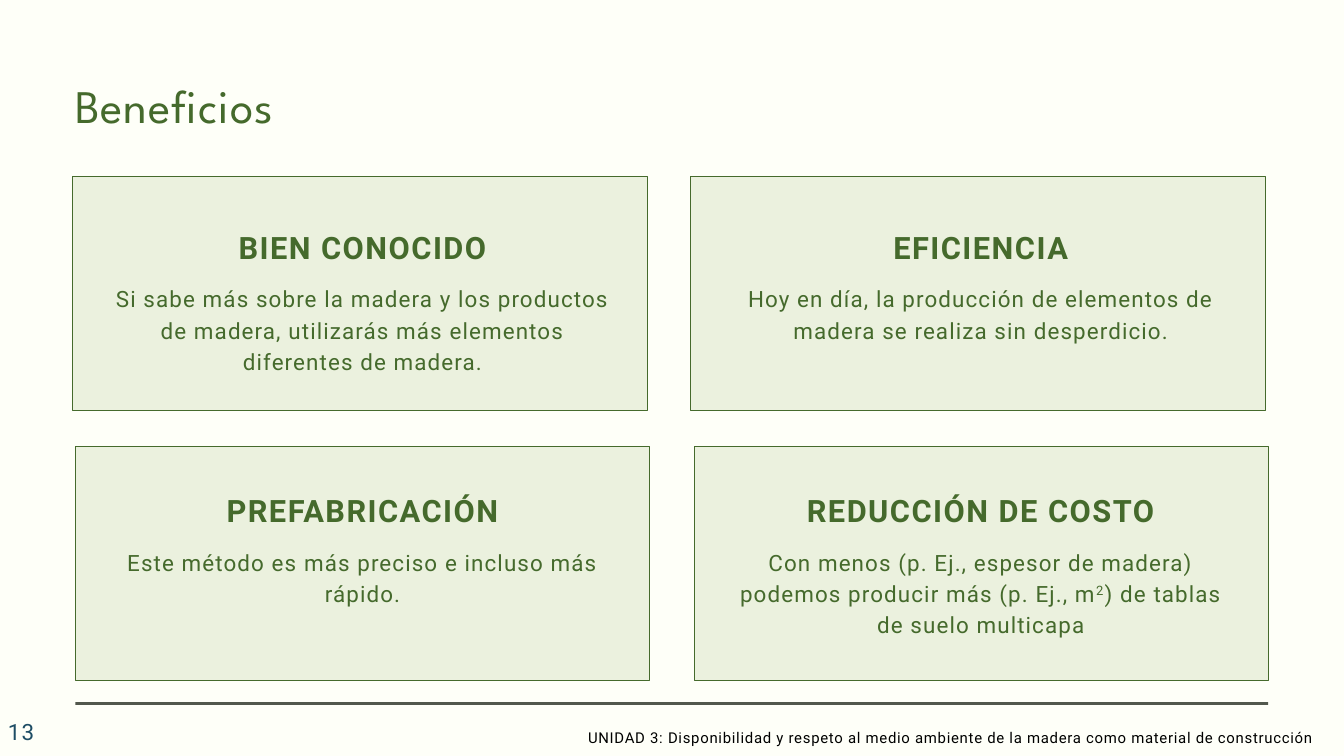
from pptx import Presentation
from pptx.dml.color import RGBColor
from pptx.enum.shapes import MSO_SHAPE
from pptx.enum.text import MSO_ANCHOR, MSO_AUTO_SIZE, PP_ALIGN
from pptx.util import Pt

PX = 9144  # 100 px to the inch
COLORS = {
    "paper": "FEFFF8",
    "green": "456A2C",
    "card": "EBF1DE",
    "rule": "52584D",
    "page": "1E4D65",
    "black": "000000",
}


def color(name):
    return RGBColor.from_string(COLORS[name])


def write(box, text, size, gap, ink="green", font="Roboto", bold=False,
          align=PP_ALIGN.LEFT, line=None):
    """Fill a text shape; gap is the letter spacing in points."""
    frame = box.text_frame
    frame.text = text
    frame.word_wrap = True
    frame.auto_size = MSO_AUTO_SIZE.NONE
    frame.vertical_anchor = MSO_ANCHOR.TOP
    frame.margin_left = frame.margin_right = 0
    frame.margin_top = frame.margin_bottom = 0
    par = frame.paragraphs[0]
    par.alignment = align
    if line:
        par.line_spacing = Pt(line)
    # A squared unit gets its exponent as a raised run
    head, mark, tail = text.partition("m²")
    if mark:
        par.runs[0].text = head + "m"
        power = par.add_run()
        power.text = "2"
        power.font._element.set("baseline", "30000")
        par.add_run().text = tail
    for run in par.runs:
        run.font.name = font
        run.font.size = Pt(size)
        run.font.bold = bold
        run.font.color.rgb = color(ink)
        run.font._element.set("spc", str(round(gap * 100)))


deck = Presentation()
deck.slide_width, deck.slide_height = 2000 * PX, 1125 * PX
slide = deck.slides.add_slide(deck.slide_layouts[5])
slide.background.fill.solid()
slide.background.fill.fore_color.rgb = color("paper")
shapes = slide.shapes

# Title
title = shapes.title
title.left, title.top = 112 * PX, 105 * PX
title.width, title.height = 775 * PX, 94 * PX
write(title, "Beneficios", 50, 1, font="League Spartan", line=66.8)

# Benefit cards: left, top, text left, head top, head, body
cards = [
    (108, 262, 170, 338, "BIEN CONOCIDO",
     "Si sabe más sobre la madera y los productos de madera, "
     "utilizarás más elementos diferentes de madera."),
    (1028, 262, 1090, 338, "EFICIENCIA",
     "Hoy en día, la producción de elementos de madera "
     "se realiza sin desperdicio."),
    (112, 664, 170, 730, "PREFABRICACIÓN",
     "Este método es más preciso e incluso más rápido."),
    (1033, 664, 1090, 730, "REDUCCIÓN DE COSTO",
     "Con menos (p. Ej., espesor de madera) podemos producir más "
     "(p. Ej., m²) de tablas de suelo multicapa"),
]
for left, top, inner, start, head, body in cards:
    card = shapes.add_shape(MSO_SHAPE.RECTANGLE, left * PX, top * PX,
                            855 * PX, 348 * PX)
    card.shadow.inherit = False
    card.fill.solid()
    card.fill.fore_color.rgb = color("card")
    card.line.color.rgb = color("green")
    card.line.width = Pt(0.75)
    box = shapes.add_textbox(inner * PX, start * PX, 739 * PX, 55 * PX)
    write(box, head, 33, 1.6, bold=True, align=PP_ALIGN.CENTER, line=41.2)
    box = shapes.add_textbox(inner * PX, (start + 80) * PX, 739 * PX, 143 * PX)
    write(box, body, 24, 1.2, align=PP_ALIGN.CENTER, line=33.6)

# Footer rule
rule = shapes.add_shape(MSO_SHAPE.RECTANGLE, 112 * PX, 1045 * PX,
                        1775 * PX, 4 * PX)
rule.shadow.inherit = False
rule.fill.solid()
rule.fill.fore_color.rgb = color("rule")
rule.line.fill.background()

# Page number and unit name
page = shapes.add_textbox(2 * PX, 1069 * PX, 233 * PX, 40 * PX)
write(page, "13", 24, 1.2, ink="page")
page.text_frame.margin_left = 10 * PX
page.text_frame.vertical_anchor = MSO_ANCHOR.MIDDLE
unit = shapes.add_textbox(875 * PX, 1060 * PX, 1125 * PX, 43 * PX)
write(unit, "UNIDAD 3: Disponibilidad y respeto al medio ambiente "
      "de la madera como material de construcción", 16, 0.8,
      ink="black", line=36.5)

deck.save("out.pptx")
